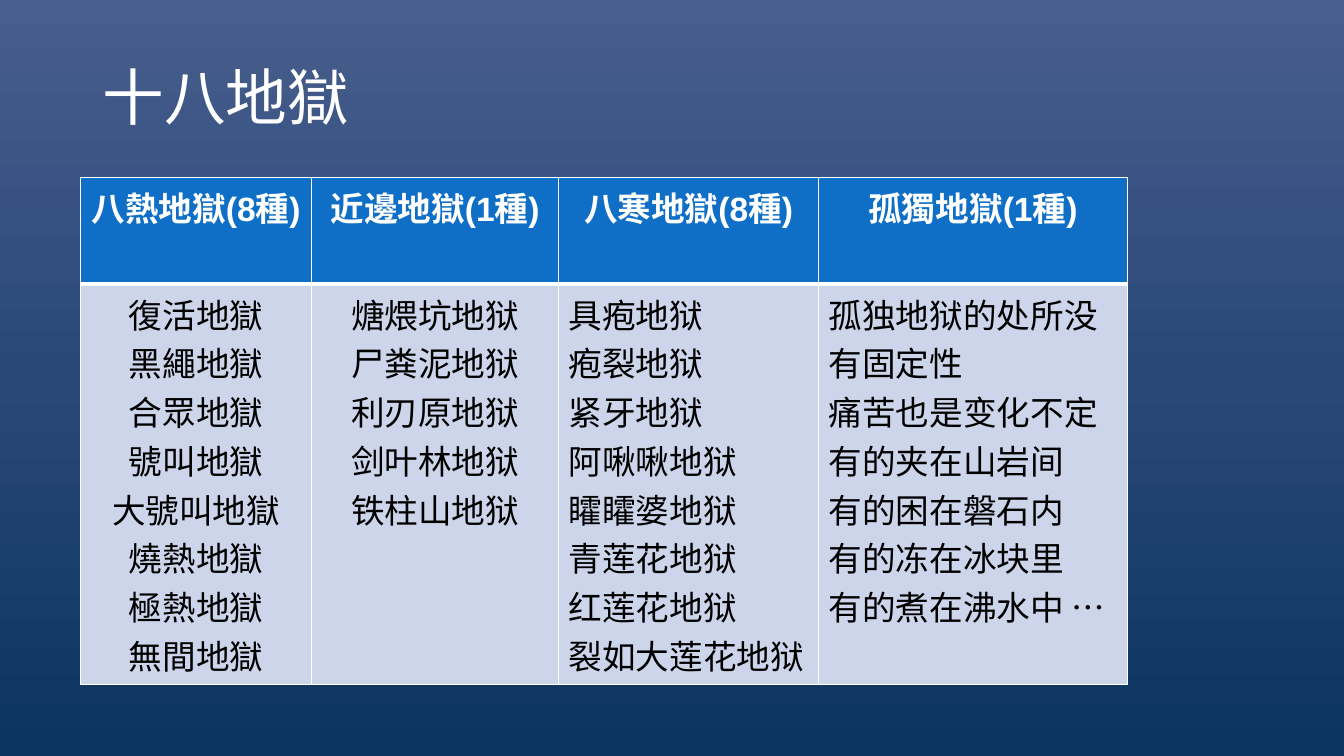
from copy import deepcopy

from lxml import etree
from pptx import Presentation
from pptx.dml.color import RGBColor
from pptx.enum.text import MSO_ANCHOR, PP_ALIGN
from pptx.oxml.ns import qn
from pptx.util import Inches, Pt

CENTER, LEFT = PP_ALIGN.CENTER, PP_ALIGN.LEFT
MIDDLE = MSO_ANCHOR.MIDDLE
WHITE = RGBColor(0xFF, 0xFF, 0xFF)
BLACK = RGBColor(0x00, 0x00, 0x00)
HEADER_BLUE = RGBColor(0x0F, 0x6F, 0xC6)
BODY_BLUE = RGBColor(0xCC, 0xD5, 0xEA)
BACKGROUND_STOPS = [
    (0, RGBColor(0x48, 0x5E, 0x8C)),
    (0.5, RGBColor(0x28, 0x48, 0x7A)),
    (1, RGBColor(0x0C, 0x34, 0x60)),
]

# Room for two heading lines and eight body lines
ROW_HEIGHTS = [1.06, 3.97]
# Heading, column width, body alignment, body lines
HELLS = [
    ("八熱地獄(8種)", 2.29, CENTER,
     ["復活地獄", "黑繩地獄", "合眾地獄", "號叫地獄",
      "大號叫地獄", "燒熱地獄", "極熱地獄", "無間地獄"]),
    ("近邊地獄(1種)", 2.45, CENTER,
     ["煻煨坑地狱", "尸粪泥地狱", "利刃原地狱", "剑叶林地狱", "铁柱山地狱"]),
    ("八寒地獄(8種)", 2.58, LEFT,
     ["具疱地狱", "疱裂地狱", "紧牙地狱", "阿啾啾地狱",
      "矐矐婆地狱", "青莲花地狱", "红莲花地狱", "裂如大莲花地狱"]),
    ("孤獨地獄(1種)", 3.06, LEFT,
     ["孤独地狱的处所没有固定性", "痛苦也是变化不定", "有的夹在山岩间",
      "有的困在磐石内", "有的冻在冰块里", "有的煮在沸水中 …"]),
]


def set_borders(cell, top, bottom):
    """Draw white cell edges; the sides are 1 pt, top and bottom as given."""
    properties = cell._tc.get_or_add_tcPr()
    edges = [("a:lnL", 1), ("a:lnR", 1), ("a:lnT", top), ("a:lnB", bottom)]
    for position, (tag, width) in enumerate(edges):
        line = etree.Element(qn(tag), w=str(Pt(width)))
        fill = etree.SubElement(line, qn("a:solidFill"))
        etree.SubElement(fill, qn("a:srgbClr"), val=str(WHITE))
        properties.insert(position, line)


def fill_cell(cell, lines, alignment, text_color, bold, fill_color):
    cell.fill.solid()
    cell.fill.fore_color.rgb = fill_color
    cell.text = "\n".join(lines)
    for paragraph in cell.text_frame.paragraphs:
        paragraph.alignment = alignment
        paragraph.font.name = "Arial"
        paragraph.font.size = Pt(24)
        paragraph.font.bold = bold
        paragraph.font.color.rgb = text_color


presentation = Presentation()
presentation.slide_width = Inches(13.33)
presentation.slide_height = Inches(7.5)
slide = presentation.slides.add_slide(presentation.slide_layouts[6])

background = slide.background.fill
background.gradient()
background.gradient_angle = 270
stop_list = slide._element.find(".//" + qn("a:gsLst"))
stop_list.insert(1, deepcopy(stop_list[0]))
for stop, (position, color) in zip(background.gradient_stops, BACKGROUND_STOPS):
    stop.position = position
    stop.color.rgb = color

title = slide.shapes.add_textbox(Inches(0.92), Inches(0.4), Inches(11.5), Inches(1.2))
title.text_frame.word_wrap = True
title.text_frame.vertical_anchor = MIDDLE
paragraph = title.text_frame.paragraphs[0]
paragraph.text = "十八地獄"
paragraph.line_spacing = 0.9
paragraph.font.name = "Calibri"
paragraph.font.size = Pt(44)
paragraph.font.color.rgb = WHITE

table_width = sum(width for _, width, _, _ in HELLS)
table = slide.shapes.add_table(
    len(ROW_HEIGHTS), len(HELLS), Inches(0.8), Inches(1.76),
    Inches(table_width), Inches(sum(ROW_HEIGHTS))).table
for row, height in zip(table.rows, ROW_HEIGHTS):
    row.height = Inches(height)
for index, (heading, width, alignment, lines) in enumerate(HELLS):
    table.columns[index].width = Inches(width)
    header, body = table.cell(0, index), table.cell(1, index)
    fill_cell(header, [heading], CENTER, WHITE, True, HEADER_BLUE)
    fill_cell(body, lines, alignment, BLACK, False, BODY_BLUE)
    set_borders(header, top=1, bottom=3)
    set_borders(body, top=3, bottom=1)

presentation.save("out.pptx")
